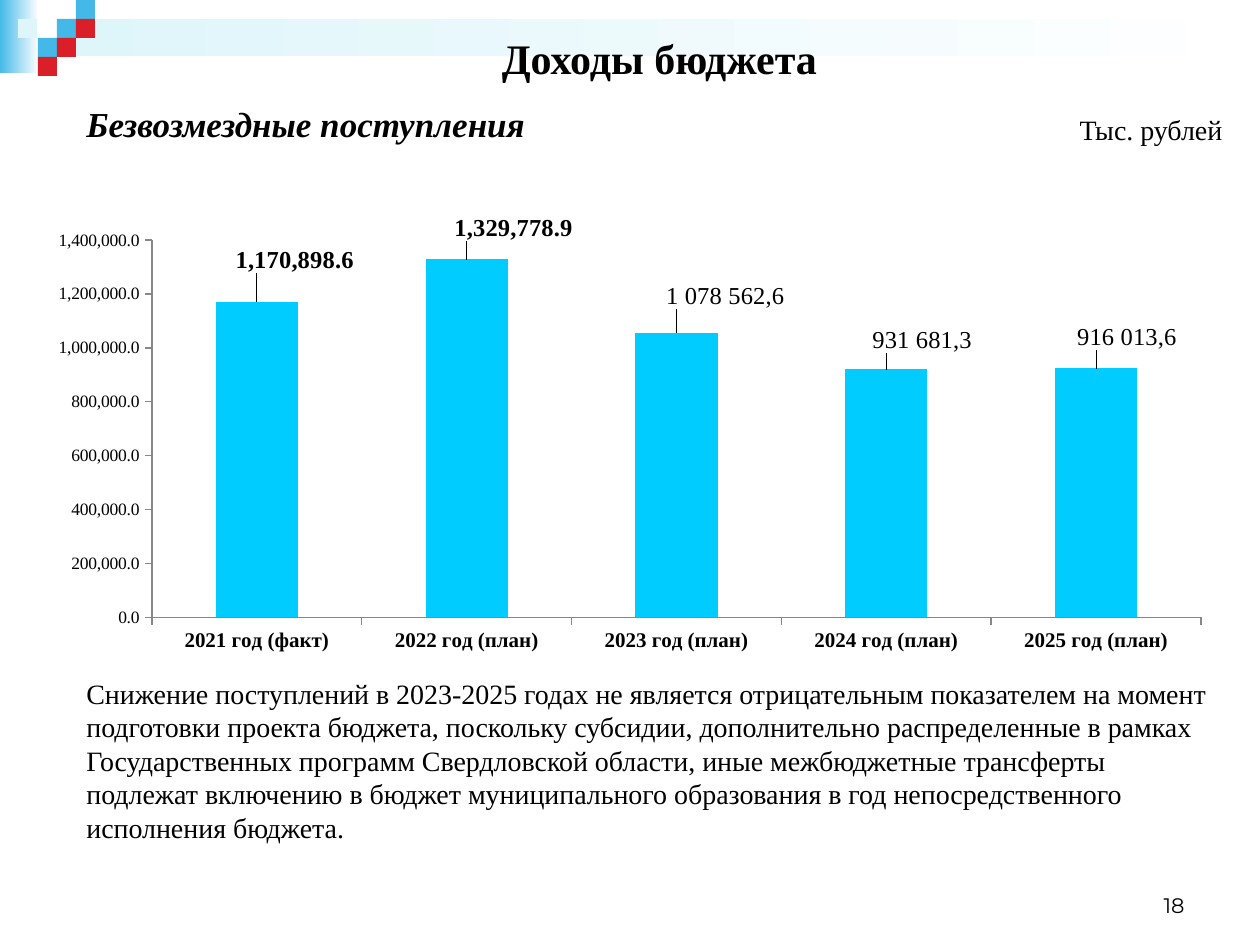
from lxml.etree import SubElement
from pptx import Presentation
from pptx.chart.data import CategoryChartData
from pptx.dml.color import RGBColor
from pptx.enum.chart import XL_CHART_TYPE as ChartType, XL_LABEL_POSITION as LabelPosition
from pptx.enum.chart import XL_TICK_MARK as TickMark
from pptx.enum.shapes import MSO_SHAPE as Shape
from pptx.enum.text import MSO_ANCHOR as Anchor, MSO_AUTO_SIZE as AutoSize, PP_ALIGN as Align
from pptx.oxml import parse_xml
from pptx.oxml.ns import nsdecls, qn
from pptx.util import Emu, Pt

SCALE = 914400 / 126
SERIF = "Times New Roman"
NUMBER_FORMAT = "#,##0.0"
COLORS = {"black": "000000", "white": "FFFFFF", "blue": "44B9E8", "red": "DA1F28",
          "pale": "DEF5FA", "bar": "00CCFF", "axis": "878787"}
SQUARE = 19
SQUARES = [(1, 1, "blue"), (2, 0, "blue"), (2, 1, "red"), (0, 2, "blue"),
           (1, 2, "red"), (0, 3, "red")]
CHART_BOX = (35, 214, 1191, 446)
PLOT_BOX = (117, 22, 1049, 381)
INCOME = [("2021 год (факт)", 1170898.6, None, (38, -24)),
          ("2022 год (план)", 1329778.9, None, (47, -13)),
          ("2023 год (план)", 1055513.2, "1 078 562,6", (49, -19)),
          ("2024 год (план)", 921327.3, "931 681,3", (36, -11)),
          ("2025 год (план)", 924868.5, "916 013,6", (31, -13))]
NOTE = ("Снижение поступлений в 2023-2025 годах не является отрицательным показателем "
        "на момент подготовки проекта бюджета, поскольку субсидии, дополнительно "
        "распределенные в рамках Государственных программ Свердловской области, иные "
        "межбюджетные трансферты подлежат включению в бюджет муниципального образования "
        "в год непосредственного исполнения бюджета.")


def px(*lengths):
    """Turn pixel lengths into EMU."""
    return [Emu(round(length * SCALE)) for length in lengths]


def color(name):
    """Look up a named colour."""
    return RGBColor.from_string(COLORS[name])


def style_font(font, size, name=SERIF, bold=False, italic=False):
    """Set a black font."""
    font.size, font.name, font.bold, font.italic = Pt(size), name, bold, italic
    font.color.rgb = color("black")


def add_block(page, place, fill, fade=False):
    """Add a plain rectangle, solid or fading to white."""
    block = page.shapes.add_shape(Shape.RECTANGLE, *px(*place))
    block.shadow.inherit = False
    block.line.fill.background()
    if fade:
        block.fill.gradient()
        block.fill.gradient_angle = 0
        for stop, name, position in zip(block.fill.gradient_stops, (fill, "white"), (0, 1)):
            stop.color.rgb = color(name)
            stop.position = position
    else:
        block.fill.solid()
        block.fill.fore_color.rgb = color(fill)


def add_text(page, place, text, size, align=Align.LEFT, anchor=Anchor.TOP, **style):
    """Add a wrapped one-paragraph text box."""
    frame = page.shapes.add_textbox(*px(*place)).text_frame
    frame.word_wrap = True
    frame.vertical_anchor = anchor
    frame.auto_size = AutoSize.SHAPE_TO_FIT_TEXT if anchor == Anchor.TOP else AutoSize.NONE
    para = frame.paragraphs[0]
    para.text = text
    para.alignment = align
    style_font(para.font, size, **style)


def make_layout(offsets, inner=False):
    """Build a manual chart layout from pixel offsets."""
    layout = parse_xml(f"<c:layout {nsdecls('c')}><c:manualLayout/></c:layout>")
    values = {}
    if inner:
        values = {"layoutTarget": "inner", "xMode": "edge", "yMode": "edge"}
    sizes = CHART_BOX[2:] * 2
    for key, offset, total in zip("xywh", offsets, sizes):
        values[key] = round(offset / total, 4)
    for key, value in values.items():
        SubElement(layout[0], qn(f"c:{key}")).set("val", str(value))
    return layout


def style_axis(axis, size, bold=False):
    """Set an axis line, its ticks and its font."""
    axis.major_tick_mark = TickMark.OUTSIDE
    axis.minor_tick_mark = TickMark.NONE
    axis.format.line.color.rgb = color("axis")
    axis.format.line.width = Pt(0.75)
    style_font(axis.tick_labels.font, size, bold=bold)


def label_points(chart, series):
    """Label each column, with its own text where given."""
    labels = series.data_labels
    labels.show_value = True
    labels.number_format = NUMBER_FORMAT
    labels.number_format_is_linked = False
    labels.position = LabelPosition.OUTSIDE_END
    style_font(labels.font, 14, bold=True)
    for index, (_, _, text, _) in enumerate(INCOME):
        label = series.points[index].data_label
        if text:
            para = label.text_frame.paragraphs[0]
            span = para.add_run()
            span.text = text
            style_font(span.font, 14)
        else:
            style_font(label.font, 14, bold=True)
        label.position = LabelPosition.OUTSIDE_END
    for element, (_, _, _, shift) in zip(chart.element.iter(qn("c:dLbl")), INCOME):
        for old in element.findall(qn("c:layout")):
            element.remove(old)
        element.insert(1, make_layout(shift))


def add_income_chart(page):
    """Add the column chart of receipts by year."""
    data = CategoryChartData(number_format=NUMBER_FORMAT)
    data.categories = [year for year, *_ in INCOME]
    data.add_series("Безвозмездные поступления", [value for _, value, *_ in INCOME])
    chart = page.shapes.add_chart(ChartType.COLUMN_CLUSTERED, *px(*CHART_BOX), data).chart
    style_font(chart.font, 10, "Arial")
    chart.has_legend = chart.has_title = False
    plot = chart.plots[0]
    plot.gap_width = 155
    plot.vary_by_categories = False
    series = plot.series[0]
    series.format.fill.solid()
    series.format.fill.fore_color.rgb = color("bar")
    style_axis(chart.category_axis, 12, bold=True)
    values = chart.value_axis
    style_axis(values, 10)
    values.minimum_scale, values.maximum_scale, values.major_unit = 0, 1400000, 200000
    values.tick_labels.number_format = NUMBER_FORMAT
    values.tick_labels.number_format_is_linked = False
    values.major_gridlines.format.line.color.rgb = color("white")
    values.major_gridlines.format.line.width = Pt(0.75)
    label_points(chart, series)
    area = next(chart.element.iter(qn("c:plotArea")))
    for old in area.findall(qn("c:layout")):
        area.remove(old)
    area.insert(0, make_layout(PLOT_BOX, inner=True))


def add_header(page):
    """Add the fading bands and the corner mosaic."""
    add_block(page, (0, 0, 39, 73), "blue", fade=True)
    add_block(page, (57, 19, 1203, 37), "pale", fade=True)
    add_block(page, (18, 19, SQUARE, SQUARE), "pale")
    for column, row, fill in SQUARES:
        add_block(page, (38 + column * SQUARE, row * SQUARE, SQUARE, SQUARE), fill)


def main():
    """Build and save the slide."""
    deck = Presentation()
    deck.slide_width, deck.slide_height = px(1260, 945)
    page = deck.slides.add_slide(deck.slide_layouts[6])
    add_header(page)
    add_text(page, (903, 861, 294, 63), "18", 12, Align.RIGHT, Anchor.BOTTOM, name="Montserrat")
    add_income_chart(page)
    add_text(page, (74, 670, 1160, 183), NOTE, 16)
    add_text(page, (402, 26, 515, 64), "Доходы бюджета", 24, Align.CENTER, bold=True)
    add_text(page, (1042, 106, 218, 47), "Тыс. рублей", 16, Align.CENTER)
    add_text(page, (74, 96, 556, 55), "Безвозмездные поступления", 20, bold=True, italic=True)
    deck.save("out.pptx")


if __name__ == "__main__":
    main()
